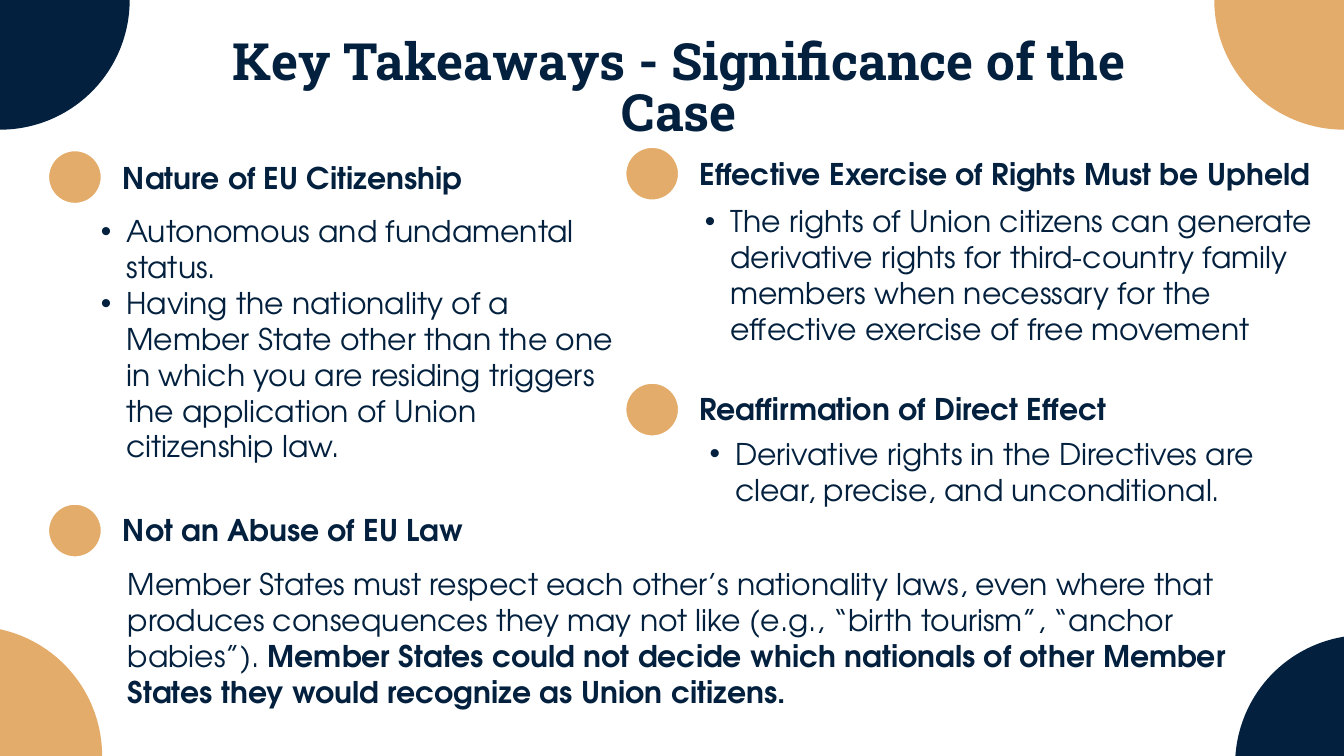
from dataclasses import dataclass

from lxml.etree import SubElement
from pptx import Presentation
from pptx.dml.color import RGBColor
from pptx.enum.shapes import MSO_SHAPE
from pptx.enum.text import PP_ALIGN
from pptx.oxml.ns import qn
from pptx.slide import Slide
from pptx.util import Inches, Pt


@dataclass(frozen=True)
class Theme:
    navy: RGBColor = RGBColor(0x03, 0x21, 0x3E)
    sand: RGBColor = RGBColor(0xE4, 0xAC, 0x6A)
    white: RGBColor = RGBColor(0xFF, 0xFF, 0xFF)
    title_font: str = "Roboto Slab"
    body_font: str = "TeX Gyre Adventor"
    title_size: float = 55
    title_leading: float = 55
    body_size: float = 32
    body_leading: float = 38.4
    marker: float = 0.81
    corner: float = 3.86
    bullet_indent: float = 0.76
    bullet_hang: float = 0.38


THEME = Theme()


@dataclass(frozen=True)
class Box:
    left: float
    top: float
    width: float
    height: float


@dataclass(frozen=True)
class Run:
    text: str
    bold: bool = False


@dataclass(frozen=True)
class Takeaway:
    marker_left: float
    marker_top: float
    heading: str
    heading_box: Box
    body_box: Box
    paragraphs: list[list[Run]]
    bulleted: bool = True


@dataclass(frozen=True)
class Corner:
    center_x: float
    center_y: float
    color: RGBColor


TAKEAWAYS = [
    Takeaway(0.71, 2.23, "Nature of EU Citizenship",
             Box(1.83, 2.38, 5.87, 0.54), Box(1.12, 3.17, 8.18, 3.73),
             [[Run("Autonomous and fundamental status.")],
              [Run("Having the nationality of a Member State other than the one in "
                   "which you are residing triggers the application of Union "
                   "citizenship law.")]]),
    Takeaway(0.71, 7.49, "Not an Abuse of EU Law",
             Box(1.83, 7.61, 5.47, 0.54), Box(1.9, 8.42, 16.56, 2.14),
             [[Run("Member States must respect each other’s nationality laws, even "
                   "where that produces consequences they may not like (e.g., “birth "
                   "tourism”, “anchor babies”). "),
               Run("Member States could not decide which nationals of other Member "
                   "States they would recognize as Union citizens.", bold=True)]],
             bulleted=False),
    Takeaway(9.3, 2.18, "Effective Exercise of Rights Must be Upheld",
             Box(10.41, 2.31, 9.36, 0.54), Box(10.11, 3.02, 9.52, 2.67),
             [[Run("The rights of Union citizens can generate derivative rights for "
                   "third-country family members when necessary for the effective "
                   "exercise of free movement")]]),
    Takeaway(9.3, 5.69, "Reaffirmation of Direct Effect",
             Box(10.41, 5.82, 6.26, 0.54), Box(10.18, 6.48, 9.45, 1.6),
             [[Run("Derivative rights in the Directives are clear, precise, and "
                   "unconditional.")]]),
]

CORNERS = [
    Corner(0, 0, THEME.navy),
    Corner(20.31, 11.38, THEME.navy),
    Corner(20, 0, THEME.sand),
    Corner(-0.41, 11.25, THEME.sand),
]


def add_circle(s: Slide, left: float, top: float, size: float,
               color: RGBColor, outlined: bool = False) -> None:
    sp = s.shapes.add_shape(MSO_SHAPE.OVAL, Inches(left), Inches(top),
                            Inches(size), Inches(size))
    sp.shadow.inherit = False
    sp.fill.solid()
    sp.fill.fore_color.rgb = color
    if outlined:
        sp.line.color.rgb = THEME.white
        sp.line.width = Pt(3)
    else:
        sp.line.fill.background()


def add_text(s: Slide, box: Box, paragraphs: list[list[Run]],
             font: str = THEME.body_font, size: float = THEME.body_size,
             leading: float = THEME.body_leading,
             align: PP_ALIGN = PP_ALIGN.LEFT, bulleted: bool = False) -> None:
    sp = s.shapes.add_textbox(Inches(box.left), Inches(box.top),
                              Inches(box.width), Inches(box.height))
    tf = sp.text_frame
    tf.word_wrap = True
    tf.margin_left = tf.margin_top = tf.margin_right = tf.margin_bottom = 0
    for i, runs in enumerate(paragraphs):
        p = tf.add_paragraph() if i else tf.paragraphs[0]
        p.alignment = align
        p.line_spacing = Pt(leading)
        if bulleted:
            add_bullet(p)
        for run in runs:
            r = p.add_run()
            r.text = run.text
            r.font.name = font
            r.font.size = Pt(size)
            r.font.bold = run.bold
            r.font.color.rgb = THEME.navy


def add_bullet(p) -> None:
    p.level = 1
    pPr = p._p.get_or_add_pPr()
    pPr.set("marL", str(Inches(THEME.bullet_indent)))
    pPr.set("indent", str(-Inches(THEME.bullet_hang)))
    SubElement(pPr, qn("a:buFont")).set("typeface", "Arial")
    SubElement(pPr, qn("a:buChar")).set("char", "•")


def add_takeaway(s: Slide, item: Takeaway) -> None:
    add_circle(s, item.marker_left, item.marker_top, THEME.marker,
               THEME.sand, outlined=True)
    add_text(s, item.heading_box, [[Run(item.heading, bold=True)]])
    add_text(s, item.body_box, item.paragraphs, bulleted=item.bulleted)


def main() -> None:
    prs = Presentation()
    prs.slide_width, prs.slide_height = Inches(20), Inches(11.25)
    s = prs.slides.add_slide(prs.slide_layouts[6])

    # Title
    add_text(s, Box(2.99, 0.58, 14.24, 1.56),
             [[Run("Key Takeaways - Significance of the Case", bold=True)]],
             THEME.title_font, THEME.title_size, THEME.title_leading,
             PP_ALIGN.CENTER)

    # Takeaways: marker, heading and body
    for item in TAKEAWAYS:
        add_takeaway(s, item)

    # Corner circles running off the slide
    for corner in CORNERS:
        add_circle(s, corner.center_x - THEME.corner / 2,
                   corner.center_y - THEME.corner / 2, THEME.corner, corner.color)

    prs.save("out.pptx")


if __name__ == "__main__":
    main()
